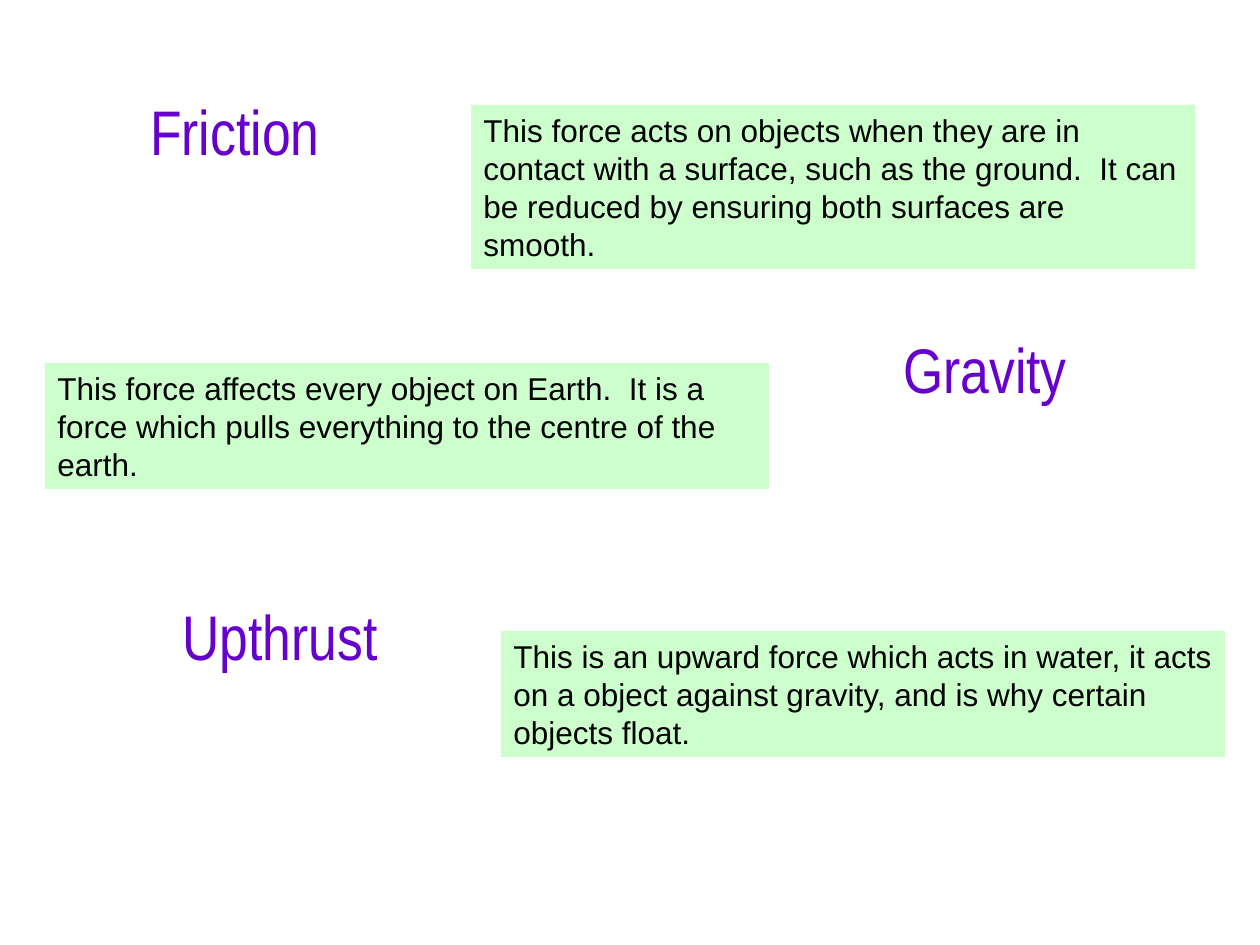
from pptx import Presentation
from pptx.dml.color import RGBColor
from pptx.enum.shapes import MSO_SHAPE
from pptx.enum.text import MSO_ANCHOR, MSO_AUTO_SIZE, PP_ALIGN
from pptx.util import Pt

RECTANGLE = MSO_SHAPE.RECTANGLE
TOP = MSO_ANCHOR.TOP
GROW = MSO_AUTO_SIZE.SHAPE_TO_FIT_TEXT
LEFT, CENTER = PP_ALIGN.LEFT, PP_ALIGN.CENTER

PURPLE = RGBColor(0x66, 0x00, 0xCC)
PALE_GREEN = RGBColor(0xCC, 0xFF, 0xCC)
BLACK = RGBColor(0x00, 0x00, 0x00)

PX = 914400 / 126
HEADING_HEIGHT = 178
DESCRIPTION_WIDTH = 724

# name, heading (left, top, width), description, box (left, top, height)
FORCES = [
    ("Friction", (94, 86, 282),
     "This force acts on objects when they are in contact with a surface, "
     "such as the ground.  It can be reduced by ensuring both surfaces are smooth.",
     (471, 105, 164)),
    ("Gravity", (799, 324, 372),
     "This force affects every object on Earth.  It is a force which pulls "
     "everything to the centre of the earth.",
     (45, 363, 126)),
    ("Upthrust", (94, 591, 372),
     "This is an upward force which acts in water, it acts on a object "
     "against gravity, and is why certain objects float.",
     (501, 631, 126)),
]


def emu(*lengths):
    return [round(length * PX) for length in lengths]


def write_text(shape, text, *, font, size, color, align, wrap):
    frame = shape.text_frame
    frame.word_wrap = wrap
    frame.vertical_anchor = TOP
    paragraph = frame.paragraphs[0]
    paragraph.alignment = align
    run = paragraph.add_run()
    run.text = text
    run.font.name = font
    run.font.size = Pt(size)
    run.font.color.rgb = color


presentation = Presentation()
presentation.slide_width, presentation.slide_height = emu(1260, 945)
slide = presentation.slides.add_slide(presentation.slide_layouts[6])

for name, (left, top, width), description, (box_left, box_top, box_height) in FORCES:
    heading = slide.shapes.add_textbox(*emu(left, top, width, HEADING_HEIGHT))
    write_text(heading, name, font="Arial Narrow", size=36, color=PURPLE,
               align=CENTER, wrap=False)

    box = slide.shapes.add_shape(
        RECTANGLE, *emu(box_left, box_top, DESCRIPTION_WIDTH, box_height))
    box.shadow.inherit = False
    box.fill.solid()
    box.fill.fore_color.rgb = PALE_GREEN
    box.line.fill.background()
    box.text_frame.auto_size = GROW
    write_text(box, description, font="Arial", size=18, color=BLACK,
               align=LEFT, wrap=True)

presentation.save("out.pptx")
